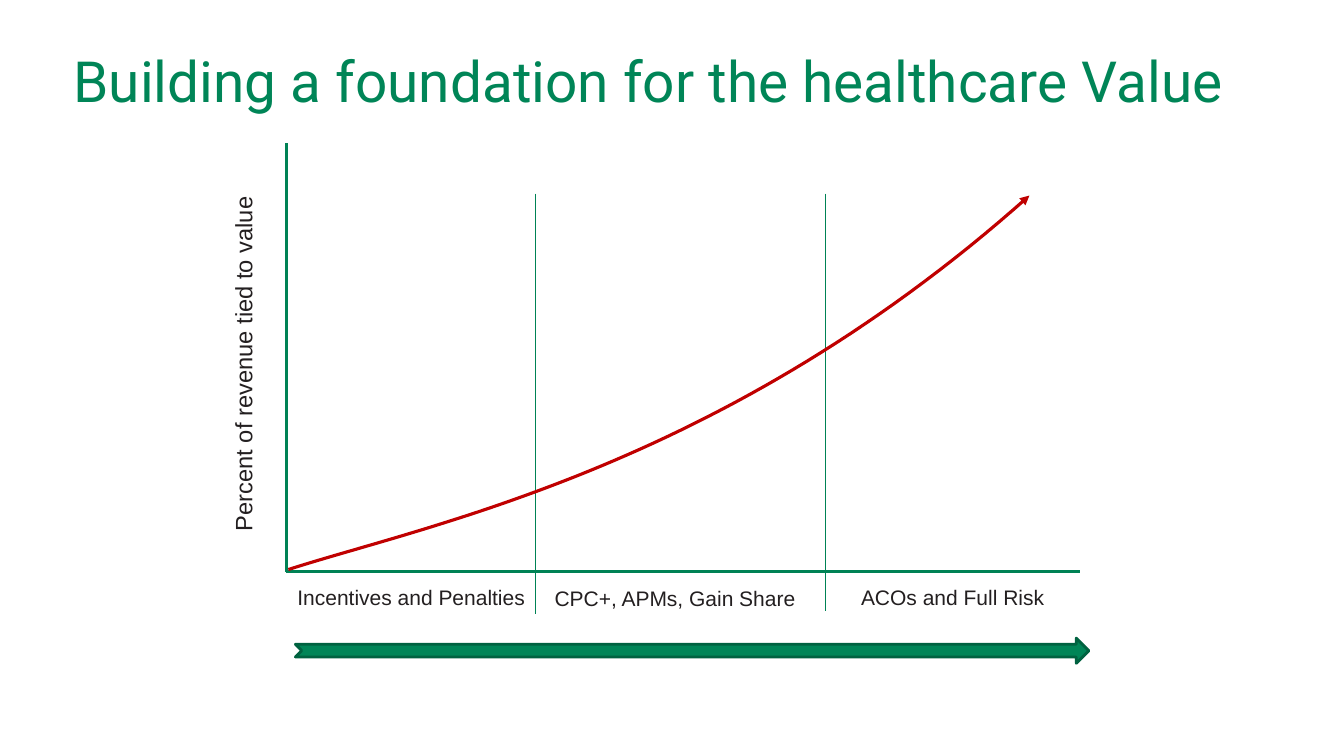
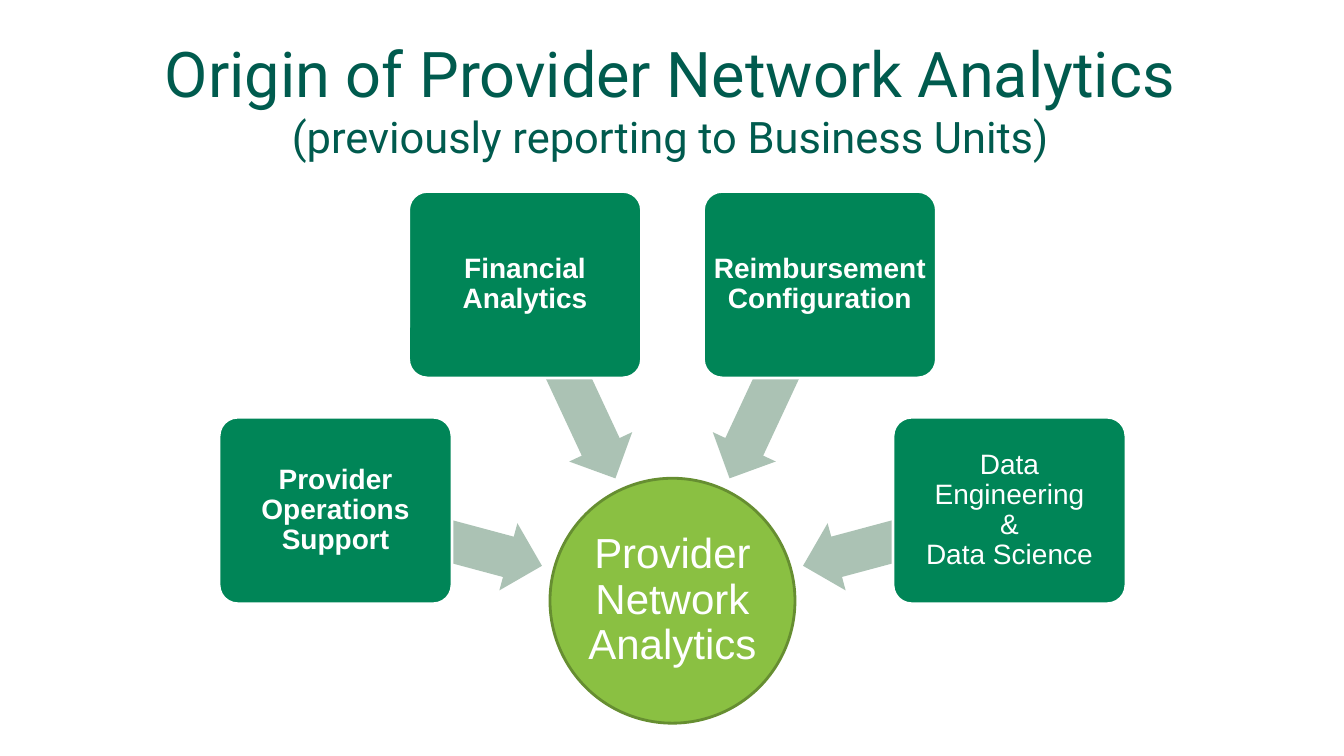
"""Build two slides on healthcare value and provider network analytics."""
import math
from lxml import etree
from pptx import Presentation
from pptx import util as u
from pptx.dml.color import RGBColor
from pptx.enum import shapes, text
from pptx.oxml import ns

GREEN, AXIS, EDGE, DARK = "008557", "008255", "006240", "005B4E"
SAGE, LIME, OLIVE = "ABC2B4", "8AC042", "668E31"
RED, INK, WHITE = "C00000", "231F20", "FFFFFF"
KIND = shapes.MSO_SHAPE
MID = text.PP_ALIGN.CENTER


def rgb(code):
    return RGBColor.from_string(code)


def style(para, size, color, font="Arial", bold=False):
    for run in para.runs:
        run.font.size = u.Pt(size)
        run.font.name = font
        run.font.bold = bold
        run.font.color.rgb = rgb(color)


def pad(frame, side, top):
    frame.margin_left = frame.margin_right = u.Inches(side)
    frame.margin_top = frame.margin_bottom = u.Inches(top)


def add_text(slide, area, words, sizes, color, font="Arial", wrap=False,
             align=None, inset=(0.11, 0.05)):
    box = slide.shapes.add_textbox(*map(u.Inches, area))
    frame = box.text_frame
    frame.text = words
    frame.word_wrap = wrap
    pad(frame, *inset)
    for para, size in zip(frame.paragraphs, sizes):
        para.alignment = align
        style(para, size, color, font)
    return box


def add_title(slide, area, words, sizes, color, align=None):
    add_text(slide, area, words, sizes, color, "Roboto", True, align, (0.06, 0.09))


def add_line(slide, start, end, width):
    line = slide.shapes.add_connector(
        shapes.MSO_CONNECTOR.STRAIGHT, *map(u.Inches, start + end))
    line.line.color.rgb = rgb(AXIS)
    line.line.width = u.Pt(width)
    etree.SubElement(line._element.spPr, ns.qn("a:effectLst"))


def add_shape(slide, kind, area, fill, edge=None, adjust=()):
    shape = slide.shapes.add_shape(kind, *map(u.Inches, area))
    shape.shadow.inherit = False
    shape.fill.solid()
    shape.fill.fore_color.rgb = rgb(fill)
    if edge:
        shape.line.color.rgb = rgb(edge)
        shape.line.width = u.Pt(2)
    else:
        shape.line.fill.background()
    for spot, value in enumerate(adjust):
        shape.adjustments[spot] = value
    return shape


def put_label(shape, words, size, bold, inset):
    frame = shape.text_frame
    frame.text = words
    frame.word_wrap = True
    frame.vertical_anchor = text.MSO_ANCHOR.MIDDLE
    pad(frame, inset, inset)
    para = frame.paragraphs[0]
    para.alignment = MID
    para.line_spacing = 0.9
    style(para, size, WHITE, bold=bold)


def add_curve(slide, knots, steps=60):
    def point(t):
        return tuple(
            u.Inches(sum(math.comb(3, i) * t**i * (1 - t)**(3 - i) * knot[axis]
                         for i, knot in enumerate(knots)))
            for axis in (0, 1))

    pen = slide.shapes.build_freeform(*point(0))
    pen.add_line_segments([point(i / steps) for i in range(1, steps + 1)], close=False)
    curve = pen.convert_to_shape()
    curve.shadow.inherit = False
    curve.fill.background()
    curve.line.color.rgb = rgb(RED)
    curve.line.width = u.Pt(2.25)
    etree.SubElement(curve.line._get_or_add_ln(), ns.qn("a:tailEnd"), type="triangle")


def around(hub, reach, angle, size):
    turn = math.radians(angle)
    wide, high = size
    return (hub[0] - reach * math.cos(turn) - wide / 2,
            hub[1] - reach * math.sin(turn) - high / 2, wide, high)


def value_slide(slide):
    add_title(slide, (0.67, 0.36, 12.02, 0.61),
              "Building a foundation for the healthcare Value", [40.5], GREEN)
    left, base = 2.84, 5.67
    add_line(slide, (left, 1.42), (left, base), 1.75)
    add_line(slide, (left, base), (10.71, base), 1.75)
    for x, foot in ((5.31, 6.09), (8.19, 6.06)):
        add_line(slide, (x, 1.92), (x, foot), 0.75)
    for x, y, wide, words in ((left, 5.75, 2.5, "Incentives and Penalties"),
                              (5.39, 5.76, 2.63, "CPC+, APMs, Gain Share"),
                              (8.43, 5.75, 2.05, "ACOs and Full Risk")):
        add_text(slide, (x, y, wide, 0.36), words, [15], INK)
    add_shape(slide, KIND.NOTCHED_RIGHT_ARROW, (2.93, 6.33, 7.87, 0.25), GREEN, EDGE)
    label = add_text(slide, (0.63, 3.4, 3.57, 0.39),
                     "Percent of revenue tied to value", [16.9], INK)
    label.rotation = 270
    add_curve(slide, ((2.86, 5.65), (4.33, 5.18), (7.21, 4.62), (10.21, 1.94)))


def origin_slide(slide):
    add_title(slide, (0.64, 0.25, 12.01, 1.37),
              "Origin of Provider Network Analytics\n"
              "(previously reporting to Business Units)", [45, 31], DARK, MID)
    hub, girth = (6.67, 5.96), 2.43
    circle = add_shape(slide, KIND.OVAL, around(hub, 0, 0, (girth, girth)), LIME, OLIVE)
    put_label(circle, "Provider Network Analytics", 30, False, 0.02)
    teams = (("Provider Operations Support", True), ("Financial Analytics", True),
             ("Reimbursement Configuration", True),
             ("Data Engineering\v&\vData Science", False))
    for spot, (words, bold) in enumerate(teams):
        angle = 15 + 50 * spot
        arrow = add_shape(slide, KIND.LEFT_ARROW, around(hub, 2.4, angle, (2.12, 0.69)),
                          SAGE, adjust=(0.6, 0.5))
        arrow.rotation = 180 + angle
        card = add_shape(slide, KIND.ROUNDED_RECTANGLE,
                         around(hub, 3.46, angle, (2.31, 1.85)), GREEN, WHITE, (0.1,))
        put_label(card, words, 20, bold, 0.04)


def main():
    deck = Presentation()
    deck.slide_width, deck.slide_height = u.Inches(13.33), u.Inches(7.5)
    for build in (value_slide, origin_slide):
        build(deck.slides.add_slide(deck.slide_layouts[6]))
    deck.save("out.pptx")


if __name__ == "__main__":
    main()
